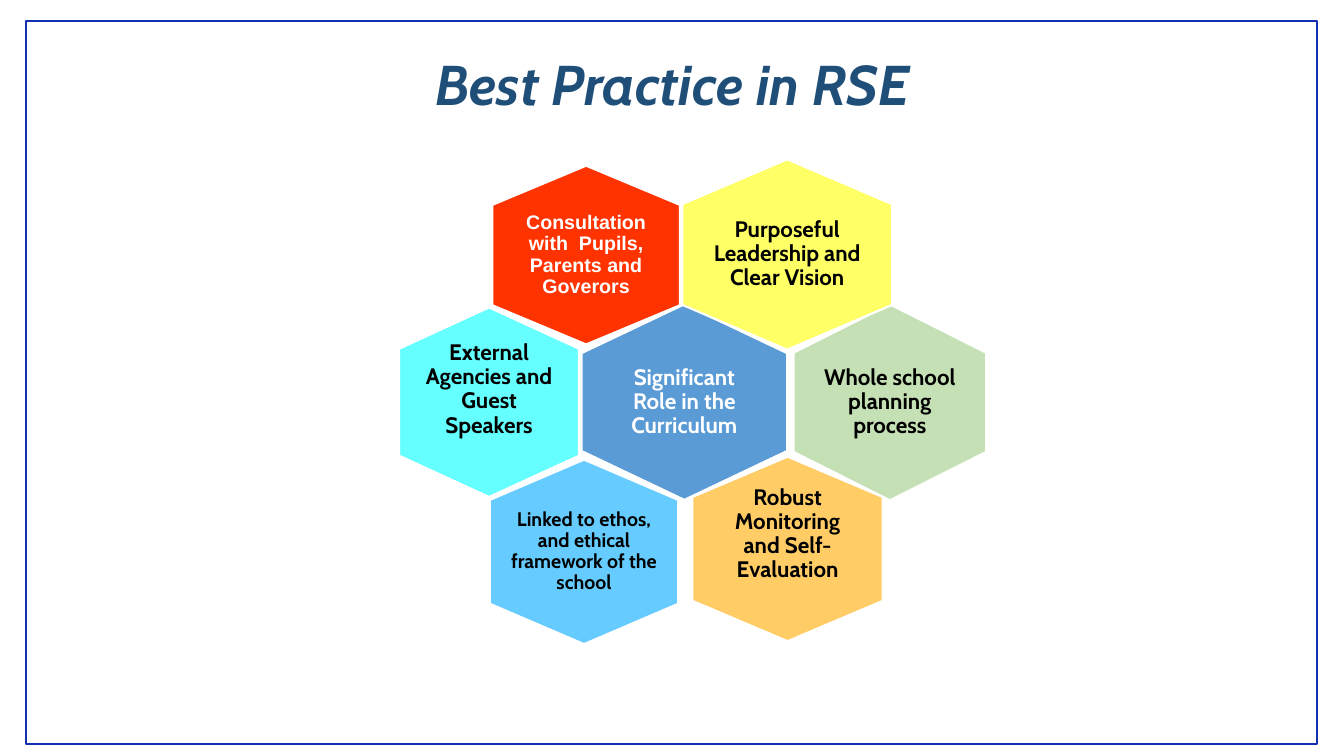
from pptx import Presentation
from pptx import util as u
from pptx.dml import color
from pptx.enum import shapes, text

Pt = u.Pt

# left, top, width, height, shoulder depth, fill, label, format; back to front
HEXAGONS = [
    (415.4, 217.4, 146.9, 139.7, 34.9, "5B9BD5", "Significant Role in the Curriculum",
     dict(hue="FFFFFF", side=21.6, rim=19.4)),
    (566.8, 217.4, 137.7, 140, 34.6, "C5E0B4", "Whole school planning process",
     dict(rim=15.8)),
    (494.6, 326.2, 136, 131.8, 28.8, "FFCC66", "Robust Monitoring and Self-Evaluation",
     dict(lift=10.5)),
    (349.9, 328.3, 134.6, 131.8, 28.8, "66CCFF",
     "Linked to ethos, and ethical framework of the school",
     dict(size=14, side=13, rim=15)),
    (285.1, 219.6, 128.5, 135.4, 29.5, "66FFFF", "External Agencies and Guest Speakers",
     dict(lift=9)),
    (351.4, 118.1, 134.6, 128.2, 28.1, "FF3300",
     "Consultation with  Pupils, Parents and Goverors",
     dict(size=14, name="Arial", hue="FFFFFF", side=13, rim=15, outline=2)),
    (487.4, 113.8, 149.8, 136, 32, "FFFF66", "Purposeful Leadership and Clear Vision",
     dict(side=18.7, rim=19.4)),
]


def rgb(code):
    return color.RGBColor.from_string(code)


def style(shape, fill, line, weight):
    shape.shadow.inherit = False
    if fill:
        shape.fill.solid()
        shape.fill.fore_color.rgb = rgb(fill)
    else:
        shape.fill.background()
    shape.line.color.rgb = rgb(line)
    shape.line.width = Pt(weight)


def write(shape, words, size=16, hue="000000", name="Cabin", italic=False,
          spacing=1.0, anchor=text.MSO_ANCHOR.MIDDLE, insets=(0, 0, 0, 0)):
    frame = shape.text_frame
    frame.word_wrap = True
    frame.vertical_anchor = anchor
    (frame.margin_left, frame.margin_top,
     frame.margin_right, frame.margin_bottom) = map(Pt, insets)
    para = frame.paragraphs[0]
    para.alignment = text.PP_ALIGN.CENTER
    para.line_spacing = spacing
    span = para.add_run()
    span.text = words
    font = span.font
    font.name, font.size, font.bold, font.italic = name, Pt(size), True, italic
    font.color.rgb = rgb(hue)


def add_border(page):
    border = page.shapes.add_shape(shapes.MSO_SHAPE.RECTANGLE,
                                   Pt(18.7), Pt(15.1), Pt(922.3), Pt(516.2))
    style(border, None, "1230B0", 1.5)


def add_title(page, words):
    box = page.shapes.add_textbox(Pt(48.2), Pt(30.2), Pt(864), Pt(73.4))
    write(box, words, size=40, hue="1F4E79", italic=True,
          anchor=text.MSO_ANCHOR.TOP, insets=(7.2, 5, 7.2, 3.6))


def add_hexagon(page, left, top, width, height, shoulder, fill, words,
                side=16.6, rim=18.7, lift=0, outline=1.5, **form):
    middle, right, bottom = left + width / 2, left + width, top + height
    corners = [(middle, top), (right, top + shoulder), (right, bottom - shoulder),
               (middle, bottom), (left, bottom - shoulder), (left, top + shoulder)]
    start, *others = [(Pt(x), Pt(y)) for x, y in corners]
    builder = page.shapes.build_freeform(*start)
    builder.add_line_segments(others, close=True)
    hexagon = builder.convert_to_shape()
    style(hexagon, fill, "FFFFFF", outline)
    # A deeper bottom inset lifts the centred text
    write(hexagon, words, spacing=0.9, insets=(side, rim, side, rim + 2 * lift), **form)


def main():
    deck = Presentation()
    deck.slide_width, deck.slide_height = Pt(960), Pt(540)
    page = deck.slides.add_slide(deck.slide_layouts[6])

    # Frame
    add_border(page)

    # Honeycomb
    for *cell, form in HEXAGONS:
        add_hexagon(page, *cell, **form)

    # Heading
    add_title(page, "Best Practice in RSE")

    deck.save("out.pptx")


if __name__ == "__main__":
    main()
